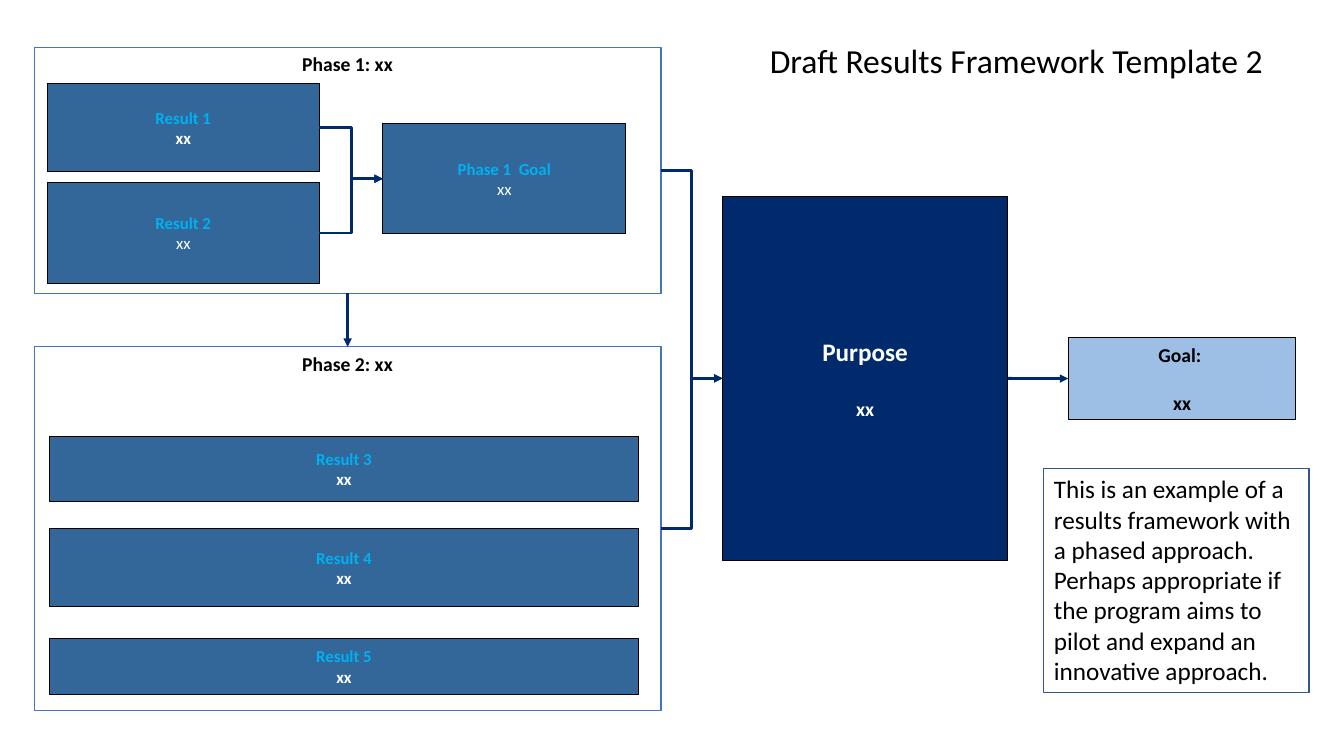
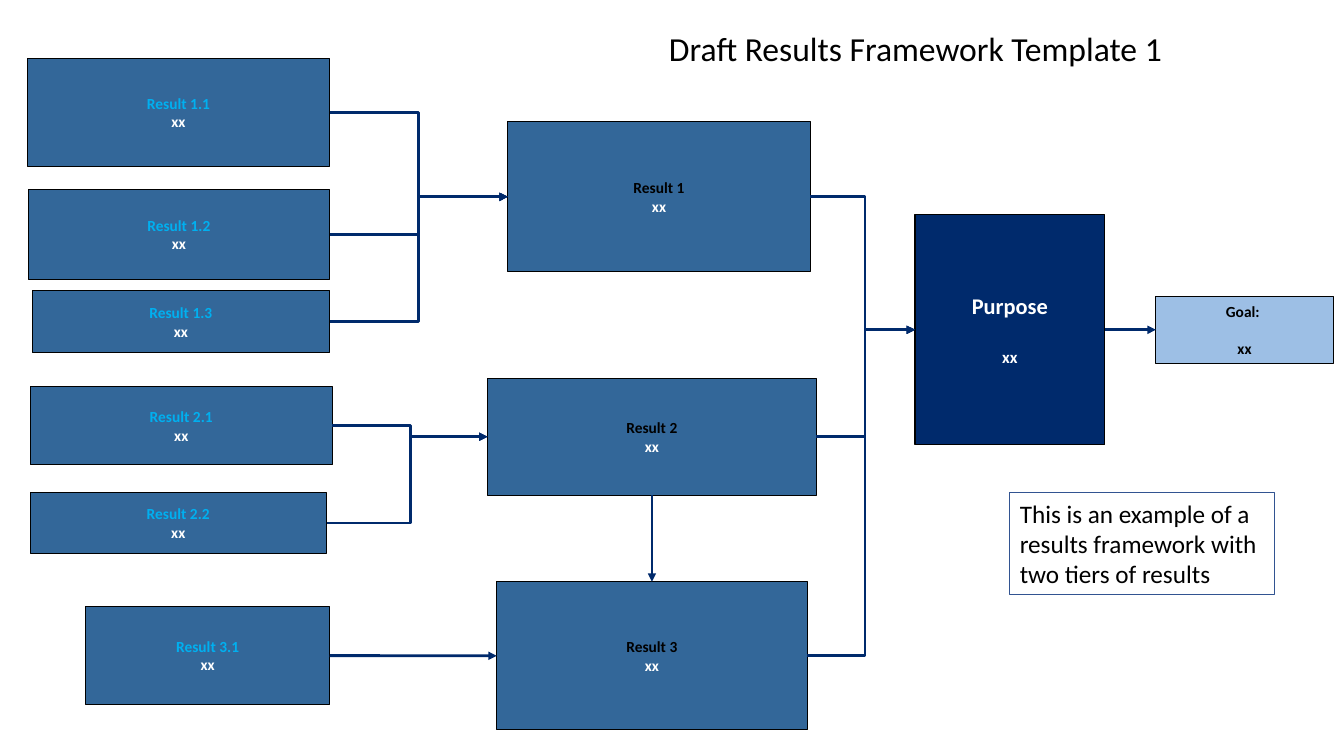
import pptx
import pptx.dml.color
import pptx.enum.shapes
import pptx.enum.text
import pptx.oxml
import pptx.oxml.ns
import pptx.util

Cm = pptx.util.Cm
Pt = pptx.util.Pt
RGBColor = pptx.dml.color.RGBColor
ALIGN = pptx.enum.text.PP_ALIGN
ANCHOR = pptx.enum.text.MSO_ANCHOR
CONNECTOR = pptx.enum.shapes.MSO_CONNECTOR

# Colours
NAVY = RGBColor(0x00, 0x2A, 0x6C)
STEEL = RGBColor(0x33, 0x67, 0x99)
PALE = RGBColor(0x9D, 0xBF, 0xE5)
CYAN = RGBColor(0x00, 0xB0, 0xF0)
FRAME = RGBColor(0x44, 0x72, 0xC4)
NOTE = RGBColor(0x32, 0x54, 0x91)
BLACK = RGBColor(0x00, 0x00, 0x00)
WHITE = RGBColor(0xFF, 0xFF, 0xFF)

# Connection sites of a rectangle
TOP, LEFT, BOTTOM, RIGHT = range(4)


class Framework:
    """Style of the results frameworks and the slide being filled."""

    font = "Calibri"
    line_height = 1.22

    def __init__(self, prs):
        self.prs = prs
        self.s = None

    def new_slide(self):
        self.s = self.prs.slides.add_slide(self.prs.slide_layouts[6])

    def add_text(self, p, text, size, color, bold=False, align=ALIGN.CENTER):
        p.alignment = align
        r = p.add_run()
        r.text = text
        r.font.name = self.font
        r.font.size = Pt(size)
        r.font.bold = bold
        r.font.color.rgb = color

    def title(self, x, y, text):
        sp = self.s.shapes.add_textbox(Cm(x), Cm(y), Cm(14), Cm(1.27))
        sp.text_frame.word_wrap = True
        self.add_text(sp.text_frame.paragraphs[0], text, 24, BLACK, align=ALIGN.LEFT)

    def box(self, x, y, w, h, fill=None, line=BLACK, anchor=ANCHOR.MIDDLE):
        sp = self.s.shapes.add_shape(pptx.enum.shapes.MSO_SHAPE.RECTANGLE,
                                     Cm(x), Cm(y), Cm(w), Cm(h))
        sp.shadow.inherit = False
        if fill is None:
            sp.fill.background()
        else:
            sp.fill.solid()
            sp.fill.fore_color.rgb = fill
        sp.line.color.rgb = line
        sp.line.width = Pt(0.75)
        sp.text_frame.word_wrap = True
        sp.text_frame.vertical_anchor = anchor
        return sp

    def phase(self, x, y, w, h, text):
        sp = self.box(x, y, w, h, line=FRAME, anchor=ANCHOR.TOP)
        self.add_text(sp.text_frame.paragraphs[0], text, 14, BLACK, True)
        return sp

    def result(self, x, y, w, h, text, size=12, color=CYAN, bold=True):
        sp = self.box(x, y, w, h, STEEL)
        tf = sp.text_frame
        self.add_text(tf.paragraphs[0], text, size, color, True)
        self.add_text(tf.add_paragraph(), "xx", size, WHITE, bold)
        return sp

    def spaced(self, sp, text, size, sub_size, color):
        """Heading and detail, one line of the heading's height apart."""
        tf = sp.text_frame
        self.add_text(tf.paragraphs[0], text, size, color, True)
        p = tf.add_paragraph()
        p.space_before = Pt(round(size * self.line_height))
        self.add_text(p, "xx", sub_size, color, True)
        return sp

    def purpose(self, x, y, w, h, size):
        return self.spaced(self.box(x, y, w, h, NAVY), "Purpose", size, size - 4, WHITE)

    def goal(self, x, y, w, h, size):
        return self.spaced(self.box(x, y, w, h, PALE), "Goal: ", size, size, BLACK)

    def note(self, x, y, h, text):
        sp = self.box(x, y, 6.68, h, line=NOTE, anchor=ANCHOR.TOP)
        self.add_text(sp.text_frame.paragraphs[0], text, 18, BLACK, align=ALIGN.LEFT)

    def arrow(self, a, b, start=RIGHT, end=LEFT, kind=CONNECTOR.STRAIGHT):
        cn = self.s.shapes.add_connector(kind, 0, 0, 0, 0)
        cn.begin_connect(a, start)
        cn.end_connect(b, end)
        cn.line.color.rgb = NAVY
        cn.line.width = Pt(2)
        sppr = cn._element.spPr
        ln = sppr.find(pptx.oxml.ns.qn("a:ln"))
        ln.append(pptx.oxml.parse_xml(
            f'<a:tailEnd {pptx.oxml.ns.nsdecls("a")} type="triangle"/>'))
        sppr.append(pptx.oxml.parse_xml(f'<a:effectLst {pptx.oxml.ns.nsdecls("a")}/>'))
        return cn

    def join(self, sources, target, trunk=None):
        """Elbow arrows from several boxes, meeting at the x of the trunk."""
        for a in sources:
            cn = self.arrow(a, target, kind=CONNECTOR.ELBOW)
            if trunk is not None:
                share = (Cm(trunk) - cn.begin_x) / (cn.end_x - cn.begin_x)
                guides = cn._element.spPr.find(".//" + pptx.oxml.ns.qn("a:avLst"))
                guides.append(pptx.oxml.parse_xml(
                    f'<a:gd {pptx.oxml.ns.nsdecls("a")} name="adj1" '
                    f'fmla="val {round(share * 100000)}"/>'))


def phased_slide(fw):
    fw.new_slide()
    fw.title(19.15, 0.89, "Draft Results Framework Template 2")

    # Phases and their results
    phase1 = fw.phase(0.86, 1.19, 15.8, 6.2, "Phase 1: xx")
    phase2 = fw.phase(0.86, 8.74, 15.8, 9.17, "Phase 2: xx")
    result1 = fw.result(1.19, 2.11, 6.86, 2.21, "Result 1")
    result2 = fw.result(1.19, 4.6, 6.86, 2.54, "Result 2", bold=False)
    phase1_goal = fw.result(9.65, 3.12, 6.12, 2.77, "Phase 1  Goal", bold=False)
    for n, y, h in ((3, 11, 1.63), (4, 13.31, 1.98), (5, 16.08, 1.42)):
        fw.result(1.24, y, 14.86, h, f"Result {n}")

    # Purpose, goal and note
    purpose = fw.purpose(18.21, 4.95, 7.19, 9.17, 18)
    goal = fw.goal(26.92, 8.51, 5.74, 2.06, 14)
    fw.note(26.31, 11.81, 5.64,
            "This is an example of a results framework with a phased approach. "
            "Perhaps appropriate if the program aims to pilot and expand an "
            "innovative approach.")

    # Arrows
    fw.join((result1, result2), phase1_goal)
    fw.join((phase1, phase2), purpose)
    fw.arrow(phase1, phase2, BOTTOM, TOP)
    fw.arrow(purpose, goal)


def tiered_slide(fw):
    fw.new_slide()
    fw.title(16.61, 0.58, "Draft Results Framework Template 1")

    # Lower tier
    lower = {key: fw.result(*at, f"Result {key}", 11) for key, at in {
        "1.1": (0.69, 1.47, 7.62, 2.72),
        "1.2": (0.71, 4.78, 7.6, 2.26),
        "1.3": (0.81, 7.32, 7.5, 1.57),
        "2.1": (0.76, 9.75, 7.62, 1.96),
        "2.2": (0.76, 12.42, 7.47, 1.52),
        "3.1": (2.16, 15.29, 6.15, 2.46),
    }.items()}

    # Upper tier
    upper = [fw.result(*at, f"Result {n}", 11, BLACK) for n, at in enumerate((
        (12.8, 3.07, 7.62, 3.78),
        (12.29, 9.53, 8.28, 2.95),
        (12.52, 14.66, 7.82, 3.73),
    ), 1)]

    # Purpose, goal and note
    purpose = fw.purpose(23.06, 5.41, 4.78, 5.8, 16)
    goal = fw.goal(29.13, 7.47, 4.47, 1.68, 11)
    fw.note(25.45, 12.42, 2.57,
            "This is an example of a results framework with two tiers of results")

    # Arrows
    fw.join([lower[key] for key in ("1.1", "1.2", "1.3")], upper[0])
    fw.join([lower[key] for key in ("2.1", "2.2")], upper[1], 10.34)
    fw.join(upper, purpose, 21.8)
    fw.arrow(lower["3.1"], upper[2])
    fw.arrow(upper[1], upper[2], BOTTOM, TOP)
    fw.arrow(purpose, goal)


def main():
    prs = pptx.Presentation()
    prs.slide_width, prs.slide_height = Cm(33.87), Cm(19.05)
    fw = Framework(prs)
    phased_slide(fw)
    tiered_slide(fw)
    prs.save("out.pptx")


if __name__ == "__main__":
    main()
